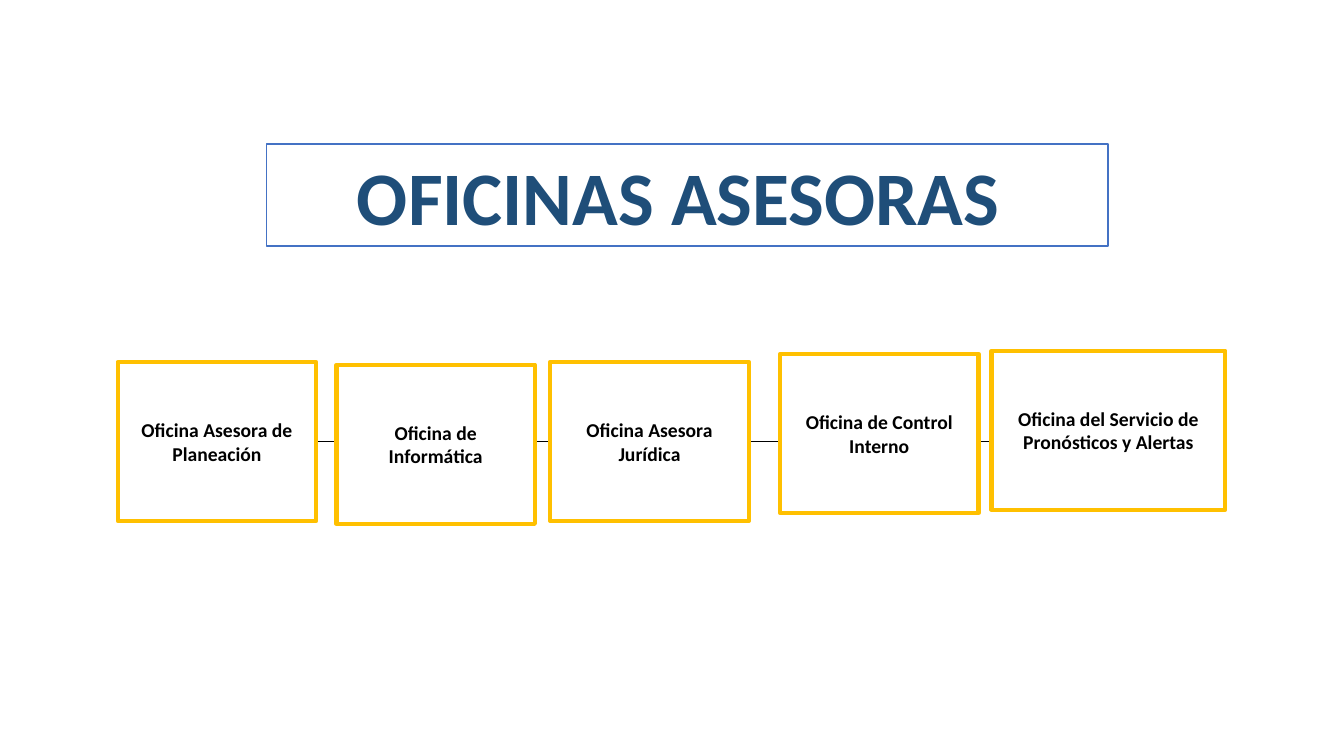
from dataclasses import dataclass

from lxml import etree
from pptx import Presentation, util as u
from pptx.dml import color
from pptx.enum import shapes, text
from pptx.oxml import ns


@dataclass(frozen=True)
class Theme:
    font: str = "Calibri"
    paper: str = "FFFFFF"
    ink: str = "000000"
    title_ink: str = "1F4E79"
    title_border: str = "4472C4"
    office_border: str = "FFC000"
    title_size: float = 54
    office_size: float = 14


class Chart:
    def __init__(self, page, theme):
        self.page = page
        self.theme = theme

    def outline(self, shape, border, weight):
        shape.fill.solid()
        shape.fill.fore_color.rgb = color.RGBColor.from_string(self.theme.paper)
        shape.line.color.rgb = color.RGBColor.from_string(border)
        shape.line.width = u.Pt(weight)

    def label(self, shape, wording, size, ink):
        frame = shape.text_frame
        frame_format = {
            "word_wrap": True,
            "auto_size": text.MSO_AUTO_SIZE.NONE,
            "vertical_anchor": text.MSO_ANCHOR.MIDDLE,
        }
        for name, value in frame_format.items():
            setattr(frame, name, value)
        para = frame.paragraphs[0]
        para.alignment = text.PP_ALIGN.CENTER
        span = para.add_run()
        span.text = wording
        font_format = {"name": self.theme.font, "size": u.Pt(size), "bold": True}
        for name, value in font_format.items():
            setattr(span.font, name, value)
        span.font.color.rgb = color.RGBColor.from_string(ink)

    def title(self, wording, left, top, width, height):
        box = self.page.shapes.title
        place = {"left": left, "top": top, "width": width, "height": height}
        for name, value in place.items():
            setattr(box, name, u.Cm(value))
        self.outline(box, self.theme.title_border, 1)
        self.label(box, wording, self.theme.title_size, self.theme.title_ink)

    def link(self, left, right, height):
        line = self.page.shapes.add_connector(
            shapes.MSO_CONNECTOR.STRAIGHT,
            u.Cm(left), u.Cm(height), u.Cm(right), u.Cm(height),
        )
        line.line.color.rgb = color.RGBColor.from_string(self.theme.ink)
        line.line.width = u.Pt(0.5)
        etree.SubElement(line._element.spPr, ns.qn("a:effectLst"))

    def office(self, wording, left, top, width, height):
        box = self.page.shapes.add_shape(
            shapes.MSO_SHAPE.RECTANGLE,
            u.Cm(left), u.Cm(top), u.Cm(width), u.Cm(height),
        )
        box.shadow.inherit = False
        self.outline(box, self.theme.office_border, 3)
        self.label(box, wording, self.theme.office_size, self.theme.ink)


OFFICE_HEIGHT = 4.01
OFFICES = [
    ("Oficina del Servicio de Pronósticos y Alertas", 24.99, 8.84, 5.89),
    ("Oficina de Control Interno", 19.66, 8.92, 5),
    ("Oficina de Informática", 8.48, 9.19, 5),
    ("Oficina Asesora Jurídica", 13.87, 9.12, 5),
    ("Oficina Asesora de Planeación", 2.97, 9.12, 5),
]


def main():
    deck = Presentation()
    deck.slide_width = u.Cm(33.87)
    deck.slide_height = u.Cm(19.05)
    page = deck.slides.add_slide(deck.slide_layouts.get_by_name("Title Only"))
    chart = Chart(page, Theme())
    chart.title("OFICINAS ASESORAS ", 6.71, 3.63, 21.21, 2.57)
    chart.link(2.97, 26.64, 11.13)
    for wording, left, top, width in OFFICES:
        chart.office(wording, left, top, width, OFFICE_HEIGHT)
    deck.save("out.pptx")


if __name__ == "__main__":
    main()
